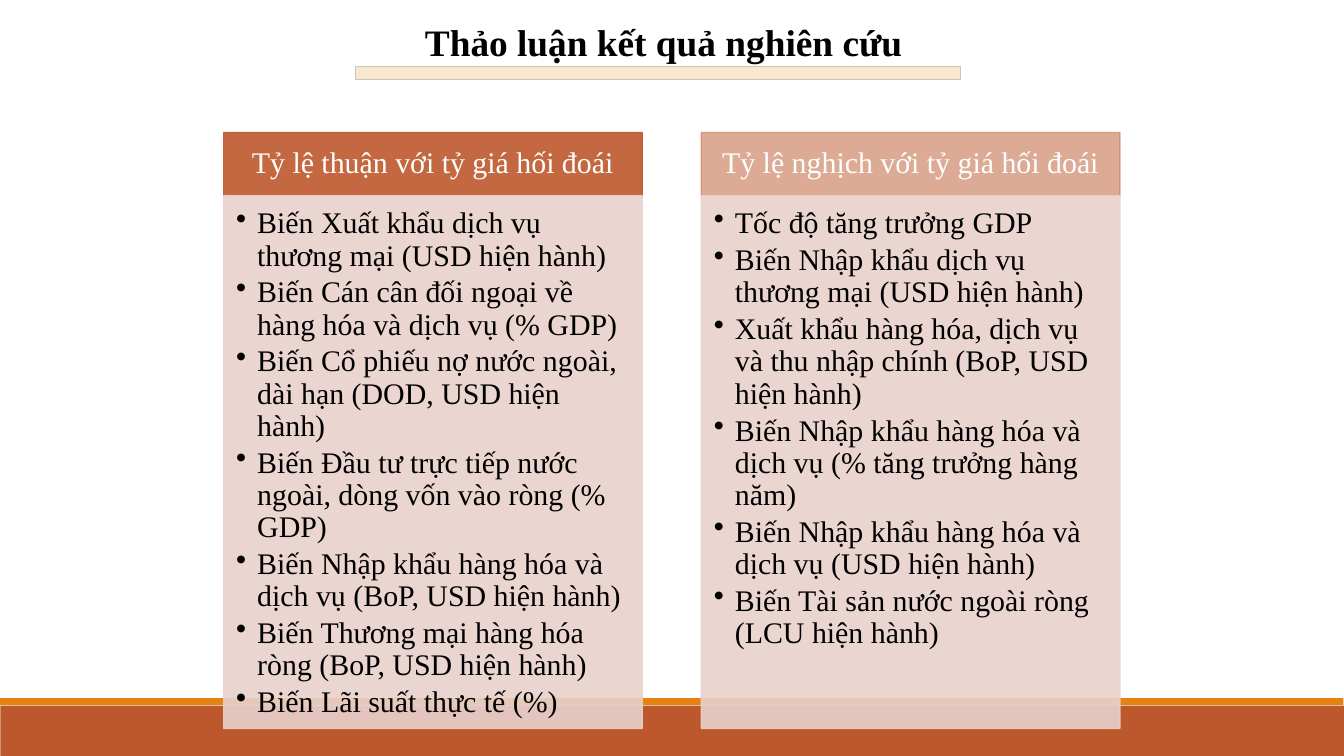
from dataclasses import dataclass

from lxml.etree import SubElement
from pptx import Presentation
from pptx.dml.color import RGBColor
from pptx.enum.shapes import MSO_SHAPE
from pptx.enum.text import MSO_ANCHOR, PP_ALIGN
from pptx.oxml.ns import qn
from pptx.util import Pt


@dataclass(frozen=True)
class Theme:
    font: str = "Times New Roman"
    title_size: int = 40
    body_size: int = 32
    rust: str = "BD582C"
    orange: str = "E48312"
    blush: str = "E8D1CD"
    cream: str = "FBE6CE"
    sage: str = "C1CAB6"
    black: str = "000000"
    white: str = "FFFFFF"


class SlideBuilder:
    def __init__(self, slide, theme):
        self.slide = slide
        self.theme = theme

    def shape(self, box, fill, line=None, opacity=100, preset=MSO_SHAPE.RECTANGLE):
        shape = self.slide.shapes.add_shape(preset, *map(Pt, box))
        shape.shadow.inherit = False
        shape.fill.solid()
        shape.fill.fore_color.rgb = RGBColor.from_string(fill)
        if line:
            shape.line.width = Pt(1.25)
            shape.line.color.rgb = RGBColor.from_string(line)
        else:
            shape.line.fill.background()
        if opacity < 100:
            for color in shape.element.spPr.iter(qn("a:srgbClr")):
                SubElement(color, qn("a:alpha"), val=str(opacity * 1000))
        return shape

    def set_text(self, shape, lines, color, size, insets, anchor=MSO_ANCHOR.TOP,
                 align=PP_ALIGN.CENTER, spacing=None, after=0, bold=False,
                 bullet_indent=0):
        frame = shape.text_frame
        frame.word_wrap = True
        frame.vertical_anchor = anchor
        (frame.margin_left, frame.margin_top,
         frame.margin_right, frame.margin_bottom) = map(Pt, insets)
        for index, line in enumerate(lines):
            paragraph = frame.add_paragraph() if index else frame.paragraphs[0]
            paragraph.text = line
            paragraph.alignment = align
            paragraph.line_spacing = spacing
            paragraph.space_after = Pt(after)
            if bullet_indent:
                self.bullet(paragraph, bullet_indent)
            paragraph.font.name = self.theme.font
            paragraph.font.size = Pt(size)
            paragraph.font.bold = bold
            paragraph.font.color.rgb = RGBColor.from_string(color)

    def bullet(self, paragraph, indent):
        properties = paragraph._p.get_or_add_pPr()
        properties.set("marL", str(Pt(indent)))
        properties.set("indent", str(-Pt(indent)))
        SubElement(properties, qn("a:buChar"), char="•")

    def title(self, box, text):
        heading = self.slide.shapes.add_textbox(*map(Pt, box))
        self.set_text(heading, [text], self.theme.black, self.theme.title_size,
                      (7.2, 3.6, 7.2, 3.6), bold=True)

    def column(self, left, heading, variables, heading_opacity):
        theme = self.theme
        top, width, header_height, body_height = 142, 448.6, 67.5, 571
        header = self.shape((left, top, width, header_height),
                            theme.rust, theme.rust, heading_opacity)
        self.set_text(header, [heading], theme.white, theme.body_size,
                      (18, 10, 18, 10), anchor=MSO_ANCHOR.MIDDLE, spacing=0.9)
        body = self.shape((left, top + header_height, width, body_height),
                          theme.blush, theme.blush, 90)
        self.set_text(body, variables, theme.black, theme.body_size,
                      (13.5, 13.5, 18, 20), align=PP_ALIGN.LEFT, spacing=0.9,
                      after=4.8, bullet_indent=22.5)


POSITIVE = [
    "Biến Xuất khẩu dịch vụ thương mại (USD hiện hành)",
    "Biến Cán cân đối ngoại về hàng hóa và dịch vụ (% GDP)",
    "Biến Cổ phiếu nợ nước ngoài, dài hạn (DOD, USD hiện hành)",
    "Biến Đầu tư trực tiếp nước ngoài, dòng vốn vào ròng (% GDP)",
    "Biến Nhập khẩu hàng hóa và dịch vụ (BoP, USD hiện hành)",
    "Biến Thương mại hàng hóa ròng (BoP, USD hiện hành)",
    "Biến Lãi suất thực tế (%)",
]
NEGATIVE = [
    "Tốc độ tăng trưởng GDP",
    "Biến Nhập khẩu dịch vụ thương mại (USD hiện hành)",
    "Xuất khẩu hàng hóa, dịch vụ và thu nhập chính (BoP, USD hiện hành)",
    "Biến Nhập khẩu hàng hóa và dịch vụ (% tăng trưởng hàng năm)",
    "Biến Nhập khẩu hàng hóa và dịch vụ (USD hiện hành)",
    "Biến Tài sản nước ngoài ròng (LCU hiện hành)",
]


def main():
    presentation = Presentation()
    presentation.slide_width, presentation.slide_height = Pt(1440), Pt(810)
    theme = Theme()
    builder = SlideBuilder(
        presentation.slides.add_slide(presentation.slide_layouts[6]), theme)

    builder.shape((0.5, 756, 1439.5, 54), theme.rust)
    builder.shape((0, 748, 1439.5, 7.5), theme.orange)
    builder.column(239.6, "Tỷ lệ thuận với tỷ giá hối đoái", POSITIVE, 90)
    builder.column(751.4, "Tỷ lệ nghịch với tỷ giá hối đoái", NEGATIVE, 50)
    builder.shape((264, 48, 882, 60), theme.cream, theme.sage,
                  preset=MSO_SHAPE.MATH_MINUS)
    builder.title((408, 17.5, 606, 55.5), "Thảo luận kết quả nghiên cứu")
    presentation.save("out.pptx")


if __name__ == "__main__":
    main()
